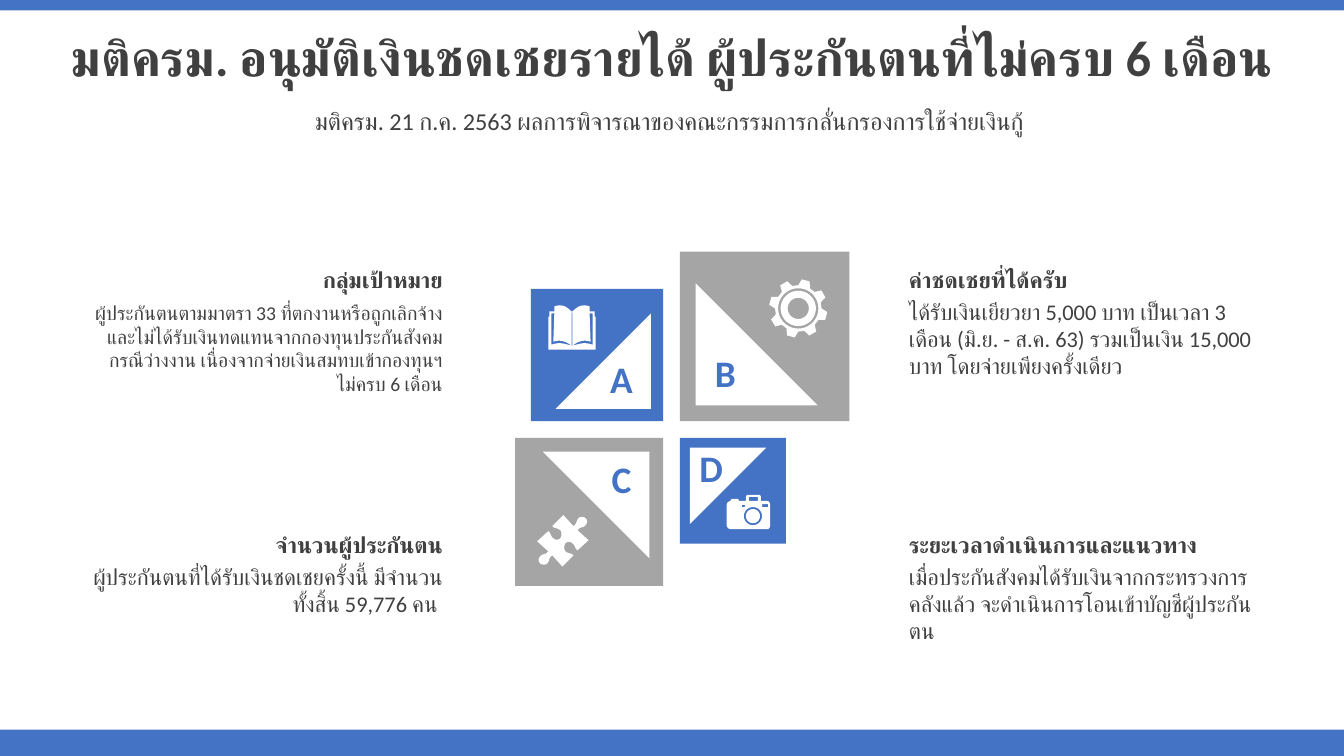
import math
import pptx
import pptx.dml.color
import pptx.enum.lang
import pptx.enum.shapes
import pptx.enum.text
import pptx.oxml
import pptx.oxml.ns
import pptx.util

Pt = pptx.util.Pt
Kind = pptx.enum.shapes.MSO_SHAPE
Side = pptx.enum.text.PP_ALIGN
Hold = pptx.enum.text.MSO_ANCHOR
HUES = {"blue": "4472C4", "grey": "A5A5A5", "white": "FFFFFF", "ink": "404040"}
FONT = "Calibri"


def hue(name):
    return pptx.dml.color.RGBColor.from_string(HUES[name])


def paint(shape, fill):
    shape.shadow.inherit = False
    shape.fill.solid()
    shape.fill.fore_color.rgb = hue(fill)
    shape.line.fill.background()


def block(slide, kind, box, fill, turn=0):
    shape = slide.shapes.add_shape(kind, *[Pt(n) for n in box])
    shape.rotation = turn
    paint(shape, fill)


def write(slide, box, words, size=16, bold=False, color="ink", align=Side.LEFT,
          anchor=Hold.TOP, lines=None, before=0, inset=3.6):
    frame = slide.shapes.add_textbox(*[Pt(n) for n in box]).text_frame
    frame.word_wrap = True
    frame.vertical_anchor = anchor
    frame.margin_top = Pt(inset)
    para = frame.paragraphs[0]
    para.alignment = align
    para.line_spacing = lines
    para.space_before = Pt(before)
    run = para.add_run()
    run.text = words
    font = run.font
    font.size, font.bold, font.name = Pt(size), bold, FONT
    font.color.rgb = hue(color)
    font.language_id = pptx.enum.lang.MSO_LANGUAGE_ID.THAI
    space = pptx.oxml.ns.nsdecls("a")
    mark = pptx.oxml.parse_xml(f'<a:cs {space} typeface="{FONT}"/>')
    run._r.get_or_add_rPr().append(mark)


def trace(loop, steps=8):
    points = [loop[0]]
    for part in loop[1:]:
        if len(part) == 2:
            points.append(part)
            continue
        knots = [points[-1], part[:2], part[2:4], part[4:]]
        for step in range(1, steps + 1):
            t = step / steps
            pull = ((1 - t) ** 3, 3 * t * (1 - t) ** 2, 3 * t * t * (1 - t), t ** 3)
            points.append(tuple(sum(p * k[i] for p, k in zip(pull, knots)) for i in (0, 1)))
    return points


def icon(slide, box, grid, loops):
    left, top, width = box
    fine = 100
    unit = width / grid * fine
    pen = None
    for loop in loops:
        first, *rest = [(x * unit, y * unit) for x, y in trace(loop)]
        if pen is None:
            pen = slide.shapes.build_freeform(*first, scale=Pt(1) / fine)
        else:
            pen.move_to(*first)
        pen.add_line_segments(rest, close=True)
    paint(pen.convert_to_shape(Pt(left), Pt(top)), "white")


def polar(x, y, radius, angle):
    turn = math.radians(angle)
    return x + radius * math.cos(turn), y + radius * math.sin(turn)


def ring(x, y, radius):
    return [polar(x, y, radius, angle) for angle in range(0, 360, 10)]


def oblong(left, top, right, bottom):
    return [(left, top), (right, top), (right, bottom), (left, bottom)]


def book(slide, box):
    width = 47
    half = [(23, 6), (19, 2, 16, 0, 12, 0), (10, 0, 8, 0, 6, 1), (6, 6), (1, 6),
            (1, 11), (0, 11), (0, 44)]
    edge = [(6, 8), (3, 8), (3, 39), (11, 36, 16, 38, 23, 40), (17, 35, 11, 34, 5, 36)]

    def flip(points):
        return [(width - x, y) for x, y in points]

    left = trace(half)
    icon(slide, box, width, [left + flip(left)[::-1], edge, flip(trace(edge)),
                             oblong(23.1, 7, 23.9, 40)])


def puzzle(slide, box):
    span = 51
    start = (48, 3)
    half = [(50, 5, 50, 8, 48, 10), (46, 13, 43, 11, 40, 15), (51, 25), (40, 35),
            (37, 33, 38, 30, 35, 28), (33, 26, 30, 26, 28, 28), (27, 30, 26, 33, 28, 36),
            (32, 39, 33, 37, 36, 40), (25, 51), (15, 40), (11, 43, 13, 44, 10, 48),
            (8, 50, 4, 49, 3, 48)]
    back = [tuple(span - n for n in part) for part in half]
    icon(slide, box, span, [[start] + half + back])


def gear(slide, box):
    mid = 29
    teeth = [polar(mid, mid, radius, angle + shift)
             for angle in range(-75, 285, 45)
             for radius, shift in ((23, -15), (29, -8), (29, 8), (23, 15))]
    icon(slide, box, 2 * mid, [teeth] + [ring(mid, mid, r) for r in (20, 17.5, 10.5)])


def camera(slide, box):
    body = [(20, 0), (33, 0), (34, 2), (34, 6), (40, 6), (42, 6, 43, 8, 43, 10), (43, 30),
            (43, 32, 42, 34, 40, 34), (4, 34), (2, 34, 0, 32, 0, 30), (0, 10),
            (0, 8, 2, 6, 4, 6), (4, 5), (5, 4), (11, 4), (12, 5), (12, 6), (19, 6),
            (19, 2)]
    icon(slide, box, 43, [body, oblong(22, 2, 31, 6), oblong(15, 10, 18, 12),
                          oblong(35, 9, 41, 12), ring(26, 21, 9), ring(26, 21, 7)])


def tile(slide, hub, size, way, fill, turn, letter, shift):
    gap, inset, cut = 6, 0.093 * size, 0.72 * size

    def nest(off, edge):
        return [c + off if w > 0 else c - off - edge for c, w in zip(hub, way)] + [edge, edge]

    block(slide, Kind.RECTANGLE, nest(gap, size), fill)
    block(slide, Kind.RIGHT_TRIANGLE, nest(gap + inset, cut), "white", turn)
    wide, high = 42.5, 39.6
    write(slide, (hub[0] + shift[0] - wide / 2, hub[1] + shift[1] - high / 2, wide, high),
          letter, size=26.7, bold=True, color="blue", align=Side.CENTER)


def wheel(slide, hub):
    for parts in (
        (94.5, (-1, -1), "blue", 270, "A", (-35.8, -36.4)),
        (121, (1, -1), "grey", 0, "B", (38.4, -40.8)),
        (75.6, (1, 1), "blue", 90, "D", (28.3, 27.6)),
        (105.8, (-1, 1), "grey", 180, "C", (-35.8, 35.6)),
    ):
        tile(slide, hub, *parts)
    for draw, x, y, width in ((book, -88, -88.6, 33.8), (puzzle, -96, 61.1, 36.7),
                              (gear, 69.6, -107.4, 41.8), (camera, 39.4, 46.7, 31)):
        draw(slide, (hub[0] + x, hub[1] + y, width))


def note(slide, box, head, body, align, size=16):
    left, top, width, high = box
    write(slide, (left, top, width, 34.5), head, bold=True, align=align)
    write(slide, (left, top + 23, width, high - 23), body, size=size, align=align,
          inset=3.6 + 16 - size)


def header(slide, box):
    left, top, width, high = box
    block(slide, Kind.RECTANGLE, (left, top, width, 7.5), "blue")
    write(slide, (left, top + 13, width, 60.5),
          "มติครม. อนุมัติเงินชดเชยรายได้ ผู้ประกันตนที่ไม่ครบ 6 เดือน",
          size=36, bold=True, align=Side.CENTER, anchor=Hold.MIDDLE, lines=0.9, before=10)
    write(slide, (left, top + 73.5, width, high - 73.5),
          "มติครม. 21 ก.ค. 2563 ผลการพิจารณาของคณะกรรมการกลั่นกรองการใช้จ่ายเงินกู้ ",
          size=17.3, align=Side.CENTER, anchor=Hold.MIDDLE, lines=0.7, before=10)


def main():
    deck = pptx.Presentation()
    deck.slide_width, deck.slide_height = Pt(960), Pt(540)
    slide = deck.slides.add_slide(deck.slide_layouts[6])
    header(slide, (0, 0, 960, 103.7))
    block(slide, Kind.RECTANGLE, (0, 521.2, 960, 18.8), "blue")
    wheel(slide, (479.7, 306.8))
    left, right, upper, lower = 56.9, 642.2, 186.5, 375.8
    for x, y, align, size, head, body in (
        (left, upper, Side.RIGHT, 14, "กลุ่มเป้าหมาย",
         "ผู้ประกันตนตามมาตรา 33 ที่ตกงานหรือถูกเลิกจ้าง และไม่ได้รับเงินทดแทนจากกองทุนประกันสังคมกรณีว่างงาน เนื่องจากจ่ายเงินสมทบเข้ากองทุนฯ ไม่ครบ 6 เดือน"),
        (left, lower, Side.RIGHT, 16, "จำนวนผู้ประกันตน",
         "ผู้ประกันตนที่ได้รับเงินชดเชยครั้งนี้ มีจำนวนทั้งสิ้น 59,776 คน "),
        (right, upper, Side.LEFT, 16, "ค่าชดเชยที่ได้ครับ",
         "ได้รับเงินเยียวยา 5,000 บาท เป็นเวลา 3 เดือน (มิ.ย. - ส.ค. 63) รวมเป็นเงิน 15,000 บาท โดยจ่ายเพียงครั้งเดียว"),
        (right, lower, Side.LEFT, 16, "ระยะเวลาดำเนินการและแนวทาง",
         "เมื่อประกันสังคมได้รับเงินจากกระทรวงการคลังแล้ว จะดำเนินการโอนเข้าบัญชีผู้ประกันตน"),
    ):
        note(slide, (x, y, 266.4, 111.5), head, body, align, size)
    deck.save("out.pptx")


if __name__ == "__main__":
    main()
